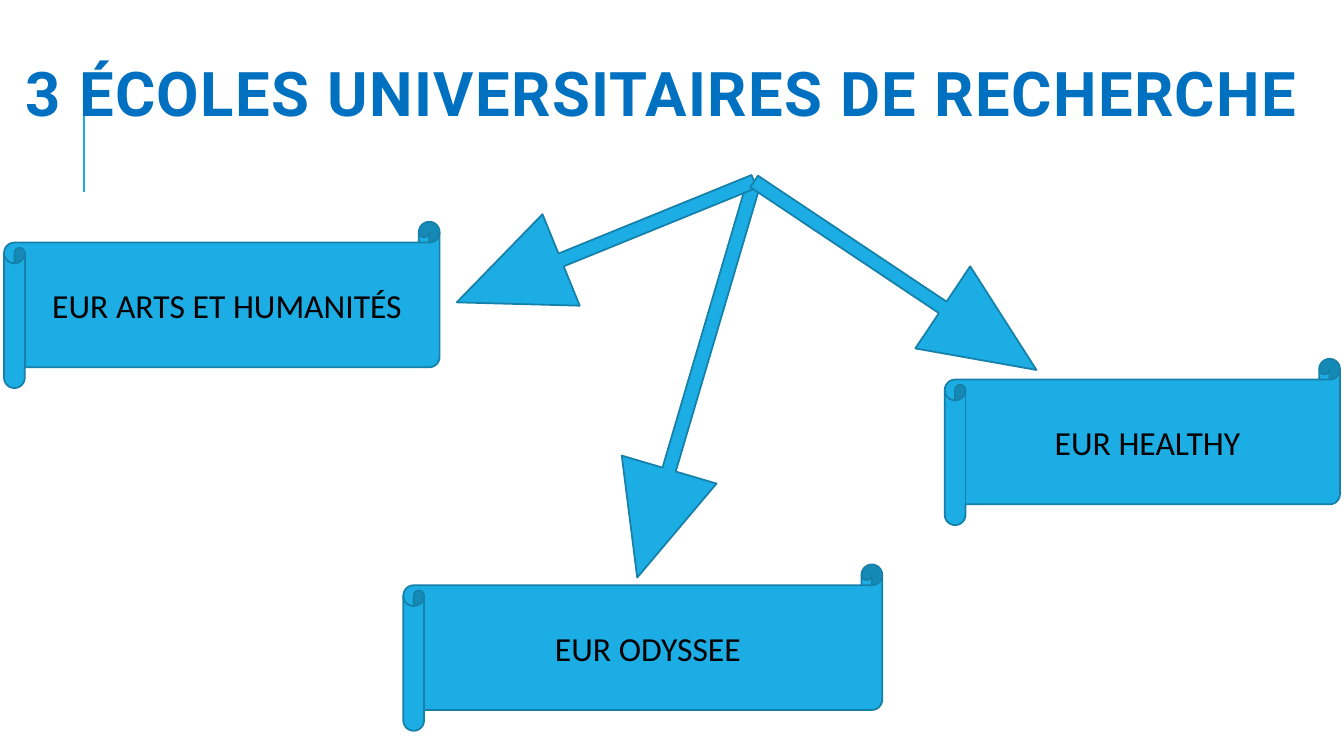
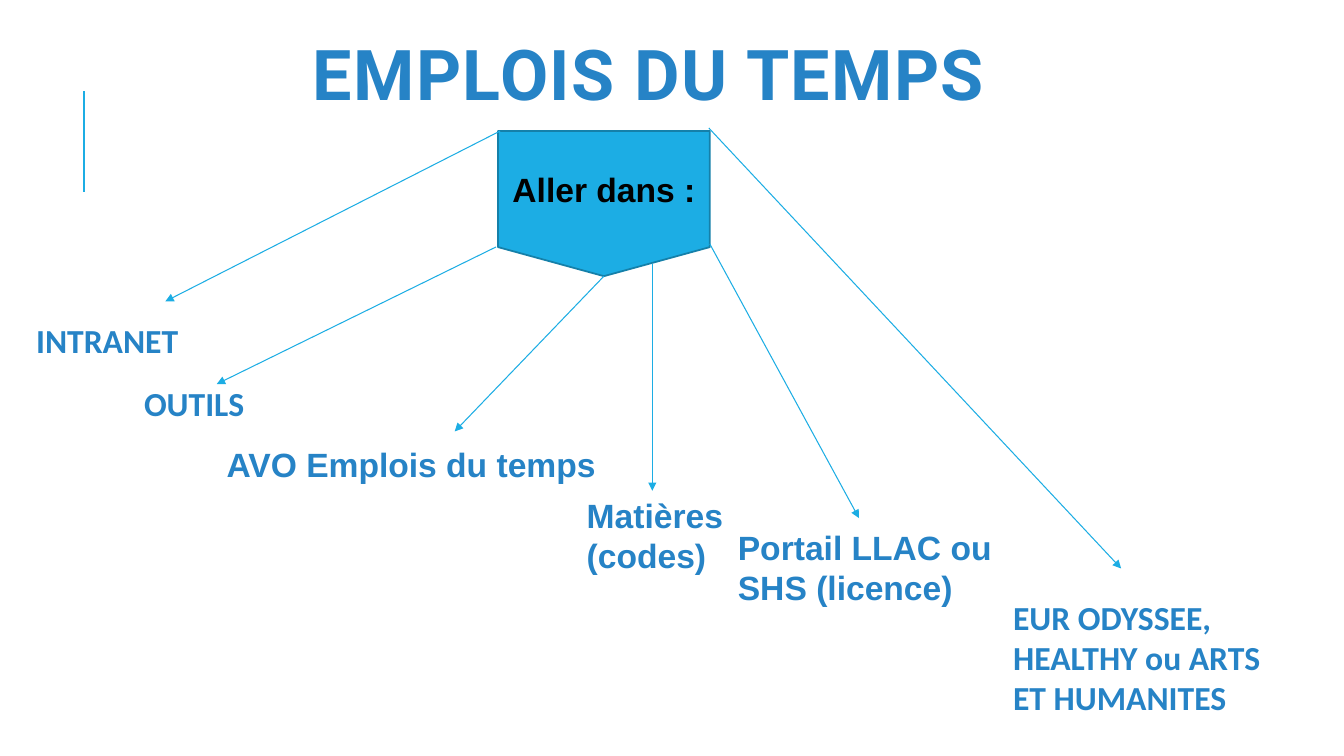
from dataclasses import dataclass
from math import atan2, degrees, hypot

from lxml import etree
from pptx import Presentation
from pptx.dml.color import RGBColor
from pptx.enum.shapes import MSO_CONNECTOR, MSO_SHAPE
from pptx.enum.text import MSO_ANCHOR, PP_ALIGN
from pptx.oxml.ns import qn
from pptx.util import Inches, Pt

SCROLL = MSO_SHAPE.HORIZONTAL_SCROLL
DOWN_ARROW = MSO_SHAPE.DOWN_ARROW
PENTAGON = MSO_SHAPE.FLOWCHART_OFFPAGE_CONNECTOR
STRAIGHT = MSO_CONNECTOR.STRAIGHT
MIDDLE, TOP = MSO_ANCHOR.MIDDLE, MSO_ANCHOR.TOP
CENTER, LEFT = PP_ALIGN.CENTER, PP_ALIGN.LEFT
BOTTOM_SITE = 2


@dataclass(frozen=True)
class Theme:
    fill: RGBColor = RGBColor(0x1C, 0xAD, 0xE4)
    outline: RGBColor = RGBColor(0x15, 0x80, 0xA9)
    accent: RGBColor = RGBColor(0x26, 0x83, 0xC6)
    strong: RGBColor = RGBColor(0x00, 0x70, 0xC0)
    ink: RGBColor = RGBColor(0, 0, 0)
    title_font: str = "Roboto"
    body_font: str = "Calibri"
    label_font: str = "Arial"
    body_size: int = 24
    outline_width: float = 1.25
    rule_width: float = 1.5
    arrow_width: float = 0.75


THEME = Theme()

# Boxes are (left, top, width, height) and points (x, y), in inches.
SCHOOLS_TITLE = ("3 ÉCOLES UNIVERSITAIRES DE RECHERCHE", (0, 0.16, 13.13, 1.64), 44, THEME.strong)
SCROLL_HEIGHT = 1.65
SCHOOLS = [  # name, left, top, width, arrow tip
    ("EUR ODYSSEE", 4, 5.6, 4.75, (6.32, 5.73)),
    ("EUR ARTS ET HUMANITÉS", 0.04, 2.2, 4.32, (4.53, 3)),
    ("EUR HEALTHY", 9.37, 3.56, 3.92, (10.28, 3.67)),
]
ARROW_ORIGIN = (7.48, 1.8)
ARROW_BREADTH = 0.98
ARROW_ADJUSTMENTS = (0.14, 1.14)

TIMETABLE_TITLE = ("EMPLOIS DU TEMPS", (1.12, -0.02, 10.63, 1.64), 50, THEME.accent)
START = ("Aller dans :", (4.94, 1.3, 2.1, 1.44))
STEPS = [  # text, box, font, arrow start (None: bottom of the start shape), arrow end
    ("INTRANET", (0.26, 3.12, 1.71, 0.51), THEME.body_font, (4.96, 1.3), (1.64, 2.99)),
    ("OUTILS", (1.33, 3.75, 1.29, 0.5), THEME.body_font, (4.92, 2.45), (2.15, 3.81)),
    ("AVO Emplois du temps", (2.15, 4.35, 4.04, 0.5), THEME.label_font, None, (4.51, 4.28)),
    ("Matières (codes)", (5.72, 4.86, 1.88, 0.91), THEME.label_font, (6.47, 2.62), (6.47, 4.87)),
    ("Portail LLAC ou SHS (licence)", (7.22, 5.18, 3.03, 0.9), THEME.label_font,
     (7.04, 2.42), (8.52, 5.14)),
    ("EUR ODYSSEE, HEALTHY ou ARTS ET HUMANITES", (9.95, 5.87, 3.03, 1.25), THEME.body_font,
     (7.03, 1.27), (11.12, 5.64)),
]


def inches(values):
    return [Inches(value) for value in values]


def write(shape, text, font, color, size=THEME.body_size, bold=False, align=CENTER, anchor=MIDDLE):
    frame = shape.text_frame
    frame.word_wrap = True
    frame.vertical_anchor = anchor
    para = frame.paragraphs[0]
    para.text = text
    para.alignment = align
    para.font.name = font
    para.font.size = Pt(size)
    para.font.bold = bold
    para.font.color.rgb = color
    return para


def add_line(page, start, end, width, arrowhead=False):
    line = page.shapes.add_connector(STRAIGHT, *inches(start + end))
    line.line.color.rgb = THEME.fill
    line.line.width = Pt(width)
    properties = line._element.spPr
    if arrowhead:
        etree.SubElement(properties.find(qn("a:ln")), qn("a:tailEnd"), type="triangle")
    etree.SubElement(properties, qn("a:effectLst"))
    return line


def add_block(page, kind, box):
    block = page.shapes.add_shape(kind, *inches(box))
    block.shadow.inherit = False
    block.fill.solid()
    block.fill.fore_color.rgb = THEME.fill
    block.line.color.rgb = THEME.outline
    block.line.width = Pt(THEME.outline_width)
    return block


def add_block_arrow(page, start, tip):
    """Turn a down arrow about its centre so that it runs from start to tip."""
    run, drop = tip[0] - start[0], tip[1] - start[1]
    length = hypot(run, drop)
    center_x, center_y = (start[0] + tip[0]) / 2, (start[1] + tip[1]) / 2
    box = (center_x - ARROW_BREADTH / 2, center_y - length / 2, ARROW_BREADTH, length)
    arrow = add_block(page, DOWN_ARROW, box)
    for index, value in enumerate(ARROW_ADJUSTMENTS):
        arrow.adjustments[index] = value
    arrow.rotation = degrees(atan2(-run, drop))


def add_page(deck, title, box, size, color):
    """Add a blank slide with the shared side rule and title style."""
    page = deck.slides.add_slide(deck.slide_layouts[6])
    add_line(page, (0.83, 1.9), (0.83, 0.9), THEME.rule_width)
    heading = page.shapes.add_textbox(*inches(box))
    heading.text_frame.margin_left = heading.text_frame.margin_right = 0
    para = write(heading, title, THEME.title_font, color, size, bold=True)
    para.line_spacing = 0.8
    para.runs[0].font._element.set("spc", "100")
    return page


def build_schools(deck):
    page = add_page(deck, *SCHOOLS_TITLE)
    for name, left, top, width, _ in SCHOOLS:
        scroll = add_block(page, SCROLL, (left, top, width, SCROLL_HEIGHT))
        write(scroll, name, THEME.body_font, THEME.ink)
    for *_, tip in SCHOOLS:
        add_block_arrow(page, ARROW_ORIGIN, tip)


def build_timetable(deck):
    page = add_page(deck, *TIMETABLE_TITLE)
    text, (left, top, width, height) = START
    start_block = add_block(page, PENTAGON, (left, top, width, height))
    write(start_block, text, THEME.label_font, THEME.ink, bold=True)
    bottom = (left + width / 2, top + height)
    for text, box, font, start, end in STEPS:
        label = page.shapes.add_textbox(*inches(box))
        write(label, text, font, THEME.accent, bold=True, align=LEFT, anchor=TOP)
        arrow = add_line(page, start or bottom, end, THEME.arrow_width, arrowhead=True)
        if start is None:
            arrow.begin_connect(start_block, BOTTOM_SITE)


def main():
    deck = Presentation()
    deck.slide_width, deck.slide_height = Inches(13.33), Inches(7.5)
    build_schools(deck)
    build_timetable(deck)
    deck.save("out.pptx")


if __name__ == "__main__":
    main()
